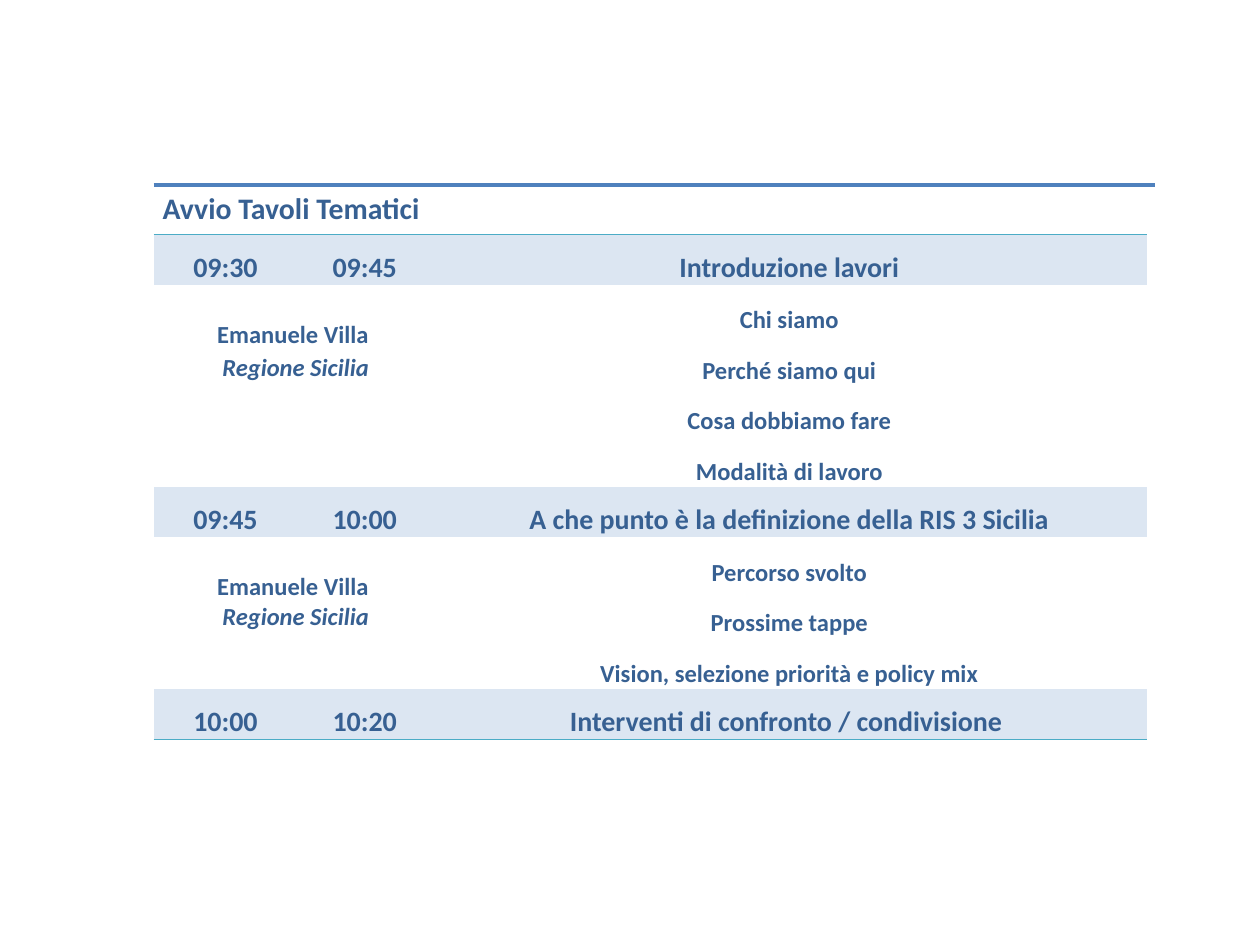
from lxml import etree
from pptx import Presentation
from pptx import util as u
from pptx.dml.color import RGBColor
from pptx.enum import shapes, text
from pptx.oxml.ns import qn

INK, BAND, EDGE, RULE = "376092", "DCE6F2", "4BACC6", "4F81BD"


def rgb(code):
    return RGBColor.from_string(code)


def write(para, words, size=14, italic=False, align=text.PP_ALIGN.CENTER, before=0):
    para.alignment = align
    para.space_before = u.Pt(before)
    run = para.add_run()
    run.text = words
    font = run.font
    font.name, font.size, font.bold, font.italic = "Calibri", u.Pt(size), True, italic
    font.color.rgb = rgb(INK)


deck = Presentation()
deck.slide_width, deck.slide_height = u.Inches(10), u.Inches(7.5)
slide = deck.slides.add_slide(deck.slide_layouts[5])

left, top = u.Inches(1.22), u.Inches(1.47)
title = slide.shapes.title
title.left, title.top, title.width, title.height = left, top, u.Inches(7.95), u.Inches(0.4)
frame = title.text_frame
frame.word_wrap = True
frame.auto_size = text.MSO_AUTO_SIZE.NONE
frame.vertical_anchor = text.MSO_ANCHOR.TOP
frame.margin_left = frame.margin_right = u.Inches(0.07)
frame.margin_top = frame.margin_bottom = u.Inches(0.07)
write(frame.paragraphs[0], "Avvio Tavoli Tematici", size=17, align=text.PP_ALIGN.LEFT)
frame.paragraphs[0].line_spacing = 0.9

rule = slide.shapes.add_connector(shapes.MSO_CONNECTOR.STRAIGHT, left, top, u.Inches(9.17), top)
rule.line.color.rgb = rgb(RULE)
rule.line.width = u.Pt(2)
etree.SubElement(rule._element.spPr, qn("a:effectLst"))

plan = [
    ("09:30", "09:45", "Introduzione lavori"),
    "Chi siamo",
    "Perché siamo qui",
    "Cosa dobbiamo fare",
    "Modalità di lavoro",
    ("09:45", "10:00", "A che punto è la definizione della RIS 3 Sicilia"),
    "Percorso svolto",
    "Prossime tappe",
    "Vision, selezione priorità e policy mix",
    ("10:00", "10:20", "Interventi di confronto / condivisione "),
]
grid = slide.shapes.add_table(
    len(plan), 3, left, u.Inches(1.86), u.Inches(7.88), u.Inches(4.01)).table
grid.first_row = grid.horz_banding = False
style = grid._tbl.tblPr.find(qn("a:tableStyleId"))
style.text = "{2D5ABB26-0587-4C30-8999-92F81FD0307C}"
for col, wide in zip(grid.columns, (1.14, 1.07, 5.67)):
    col.width = u.Inches(wide)

edges = {0: "a:lnT", len(plan) - 1: "a:lnB"}
for row, item in enumerate(plan):
    head = isinstance(item, tuple)
    for col in range(3):
        cell = grid.cell(row, col)
        cell.margin_left = cell.margin_right = cell.margin_top = u.Inches(0.01)
        cell.margin_bottom = 0
        cell.vertical_anchor = text.MSO_ANCHOR.BOTTOM
        if head:
            cell.fill.solid()
            cell.fill.fore_color.rgb = rgb(BAND)
            write(cell.text_frame.paragraphs[0], item[col], size=16)
        else:
            cell.fill.background()
            if col == 2:
                write(cell.text_frame.paragraphs[0], item)
        if row in edges:
            line = etree.Element(qn(edges[row]), w=str(u.Pt(1)))
            fill = etree.SubElement(line, qn("a:solidFill"))
            etree.SubElement(fill, qn("a:srgbClr"), val=EDGE)
            cell._tc.get_or_add_tcPr().insert(0, line)

for first, last, gap in ((1, 4, 2), (6, 8, 0)):
    cell = grid.cell(first, 0)
    cell.merge(grid.cell(last, 1))
    cell.vertical_anchor = text.MSO_ANCHOR.TOP
    cell.margin_top = u.Inches(0.28)
    write(cell.text_frame.paragraphs[0], "Emanuele Villa")
    write(cell.text_frame.add_paragraph(), " Regione Sicilia", italic=True, before=gap)

deck.save("out.pptx")
